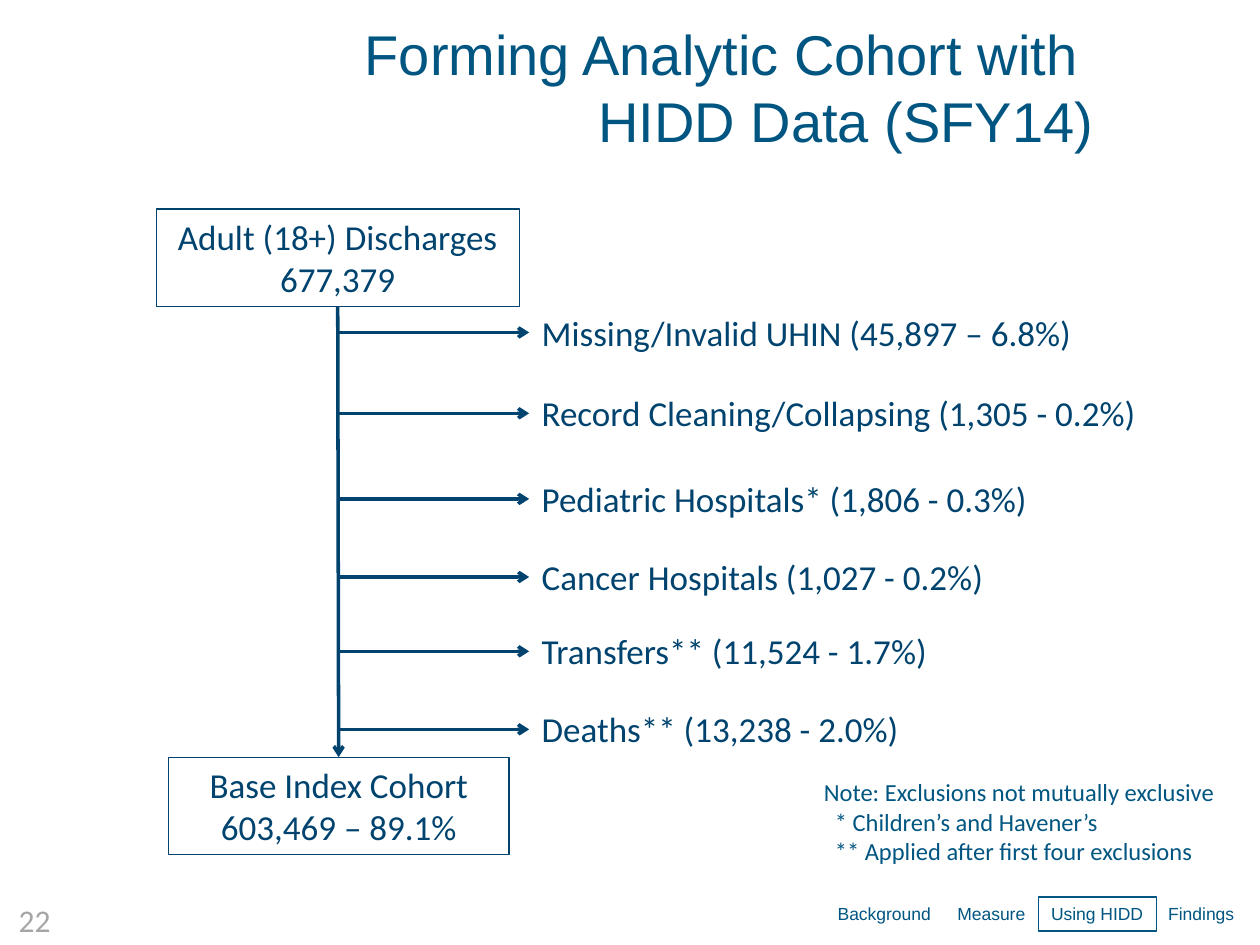
from typing import NamedTuple

import lxml.etree
import pptx
import pptx.dml.color
import pptx.enum.shapes
import pptx.enum.text
import pptx.oxml.ns
import pptx.util

Pt = pptx.util.Pt
Align = pptx.enum.text.PP_ALIGN
NAVY = "00436E"
TEAL = "005581"
GREY = "A6A6A6"
TRUNK_X = 193.5
LABEL_X = 302.4


class TextStyle(NamedTuple):
    name: str
    size: float
    color: str
    alignment: int = Align.LEFT
    wrap: bool = True


class Block(NamedTuple):
    lines: list[str]
    left: float
    top: float
    width: float
    height: float
    style: TextStyle
    boxed: bool = False


class Exclusion(NamedTuple):
    label: str
    top: float
    width: float


class Tab(NamedTuple):
    label: str
    left: float
    width: float
    current: bool = False


TITLE = TextStyle("Arial", 32, TEAL, Align.RIGHT)
COHORT = TextStyle("Calibri", 20, NAVY, Align.CENTER)
EXCLUSION = TextStyle("Calibri", 20, NAVY)
NOTE = TextStyle("Calibri", 14, TEAL)
TAB = TextStyle("Arial", 10, TEAL, wrap=False)
NUMBER = TextStyle("Calibri", 18, GREY, Align.RIGHT, False)

COHORTS = [
    Block(["Adult (18+) Discharges", "677,379"], 89.3, 119.5, 207.4, 55.7, COHORT, True),
    Block(["Base Index Cohort", "603,469 – 89.1%"], 96.5, 432.7, 194.4, 55.7, COHORT, True),
]
EXCLUSIONS = [
    Exclusion("Missing/Invalid UHIN (45,897 – 6.8%)", 174.2, 322.6),
    Exclusion("Record Cleaning/Collapsing (1,305 - 0.2%)", 220.4, 358.6),
    Exclusion("Pediatric Hospitals* (1,806 - 0.3%)", 269.3, 337),
    Exclusion("Cancer Hospitals (1,027 - 0.2%)", 313.9, 337),
    Exclusion("Transfers** (11,524 - 1.7%)", 356.4, 266.4),
    Exclusion("Deaths** (13,238 - 2.0%)", 401, 266.4),
]
TABS = [
    Tab("Background", 471.6, 68.4),
    Tab("Measure", 540, 54),
    Tab("Using HIDD", 593.5, 67.5, True),
    Tab("Findings", 660.5, 52.5),
]
NOTES = [
    "Note: Exclusions not mutually exclusive",
    "* Children’s and Havener’s",
    "** Applied after first four exclusions",
]


def rgb(value: str) -> pptx.dml.color.RGBColor:
    return pptx.dml.color.RGBColor.from_string(value)


def apply(target: object, values: dict) -> None:
    for name, value in values.items():
        setattr(target, name, value)


def draw_block(slide: pptx.slide.Slide, block: Block) -> pptx.shapes.autoshape.Shape:
    place = [Pt(value) for value in block[1:5]]
    style = block.style
    if block.boxed:
        shape = slide.shapes.add_shape(pptx.enum.shapes.MSO_SHAPE.RECTANGLE, *place)
        shape.shadow.inherit = False
        shape.fill.background()
        shape.line.color.rgb = rgb(style.color)
        shape.line.width = Pt(0.75)
    else:
        shape = slide.shapes.add_textbox(*place)
    frame = shape.text_frame
    apply(frame, {
        "text": "\n".join(block.lines),
        "word_wrap": style.wrap,
        "auto_size": pptx.enum.text.MSO_AUTO_SIZE.SHAPE_TO_FIT_TEXT,
        "vertical_anchor": pptx.enum.text.MSO_ANCHOR.TOP,
    })
    for paragraph in frame.paragraphs:
        paragraph.alignment = style.alignment
        for run in paragraph.runs:
            apply(run.font, {"name": style.name, "size": Pt(style.size)})
            run.font.color.rgb = rgb(style.color)
    return shape


def draw_title(slide: pptx.slide.Slide) -> None:
    lines = ["Forming Analytic Cohort with \vHIDD Data (SFY14)"]
    shape = draw_block(slide, Block(lines, 20.2, 9.4, 612, 79.9, TITLE))
    apply(shape.text_frame, {
        "auto_size": pptx.enum.text.MSO_AUTO_SIZE.NONE,
        "vertical_anchor": pptx.enum.text.MSO_ANCHOR.MIDDLE,
    })
    qualified = pptx.oxml.ns.qn
    line_break = shape.text_frame.paragraphs[0]._p.find(qualified("a:br"))
    lxml.etree.SubElement(line_break, qualified("a:rPr"), sz="3600")


def draw_arrow(slide: pptx.slide.Slide, start: tuple[float, float], end: tuple[float, float]) -> None:
    connector = slide.shapes.add_connector(
        pptx.enum.shapes.MSO_CONNECTOR.STRAIGHT, *[Pt(value) for value in start + end]
    )
    connector.line.color.rgb = rgb(NAVY)
    connector.line.width = Pt(2)
    qualified = pptx.oxml.ns.qn
    lxml.etree.SubElement(connector.line._get_or_add_ln(), qualified("a:tailEnd"), type="arrow")
    lxml.etree.SubElement(connector._element.spPr, qualified("a:effectLst"))


def draw_notes(slide: pptx.slide.Slide) -> None:
    shape = draw_block(slide, Block(NOTES, 463.7, 440.6, 247.7, 58.3, NOTE))
    for paragraph in shape.text_frame.paragraphs[1:]:
        paragraph._p.get_or_add_pPr().set("marL", str(Pt(6.3)))


def main() -> None:
    presentation = pptx.Presentation()
    apply(presentation, {"slide_width": Pt(720), "slide_height": Pt(540)})
    slide = presentation.slides.add_slide(presentation.slide_layouts[6])
    draw_block(slide, Block(["22"], 0, 511.2, 36, 28.8, NUMBER))
    draw_title(slide)
    for cohort in COHORTS:
        draw_block(slide, cohort)
    draw_arrow(slide, (193, 175.5), (TRUNK_X, 432.7))
    for label, top, width in EXCLUSIONS:
        draw_block(slide, Block([label], LABEL_X, top, width, 31.5, EXCLUSION))
        draw_arrow(slide, (TRUNK_X, top + 15.8), (LABEL_X, top + 15.8))
    for label, left, width, current in TABS:
        draw_block(slide, Block([label], left, 512.6, width, 19.4, TAB, current))
    draw_notes(slide)
    presentation.save("out.pptx")


if __name__ == "__main__":
    main()
